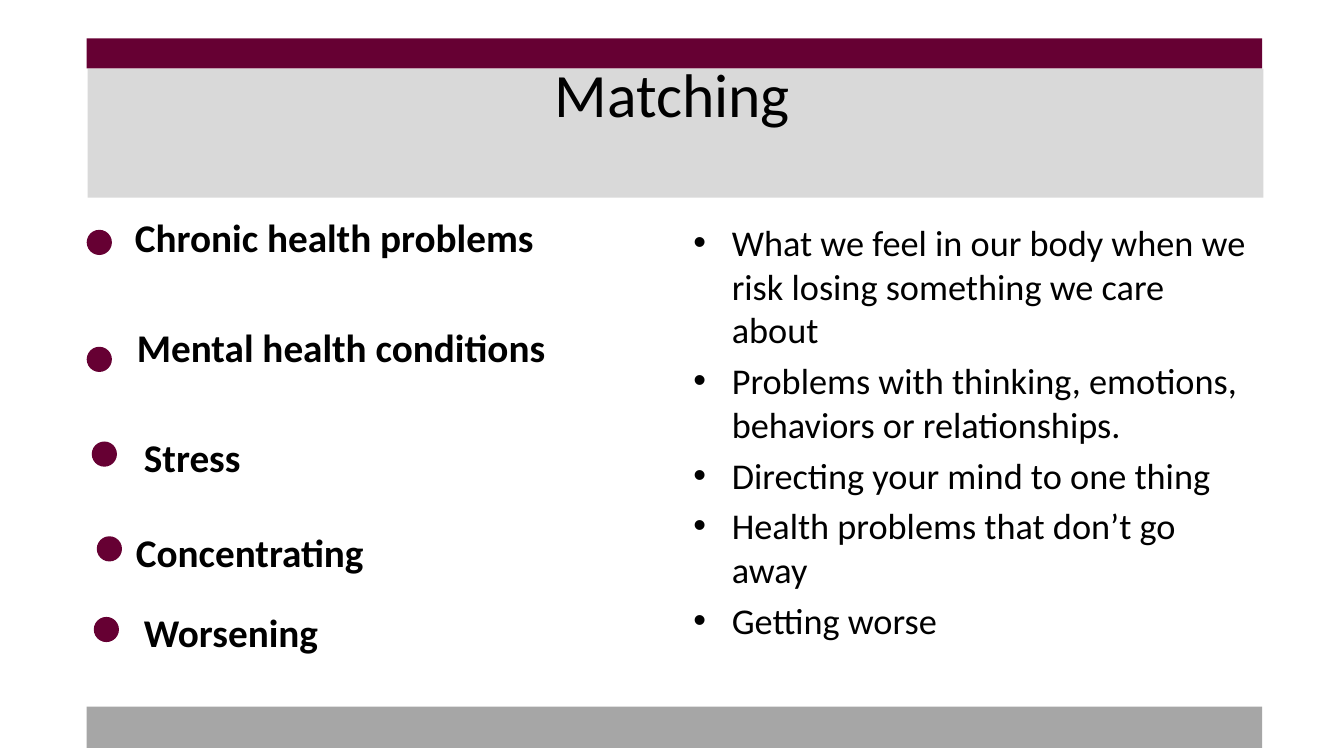
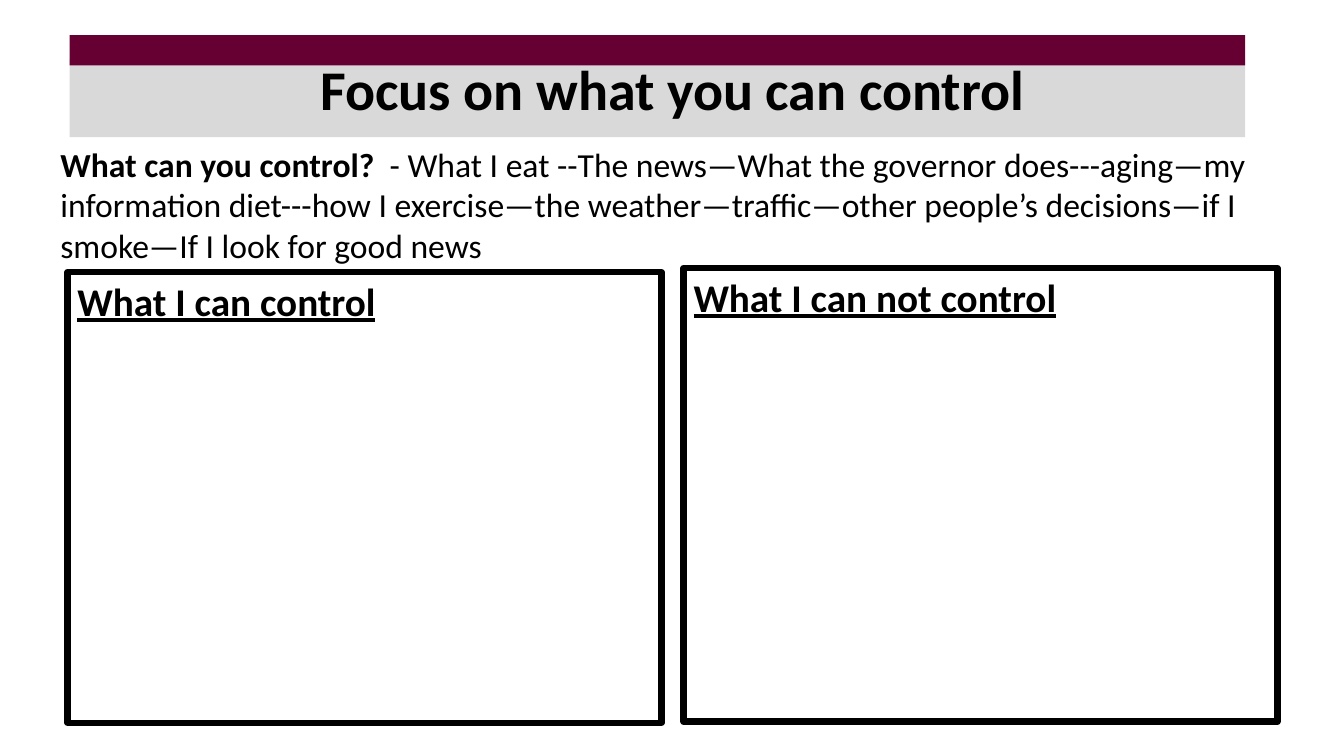
from typing import NamedTuple

from pptx import Presentation
from pptx.dml.color import RGBColor
from pptx.enum.shapes import MSO_SHAPE as Shp
from pptx.enum.text import MSO_ANCHOR as Anchor, PP_ALIGN as Align
from pptx.oxml.ns import qn
from pptx.util import Inches, Pt
from lxml import etree

COLORS = {"maroon": "660033", "light": "D9D9D9", "mid": "A6A6A6", "black": "000000"}
FONT = "Calibri"
BAND_W, STRIPE_H, DOT = 11.66, 0.3, 0.25


class Box(NamedTuple):
    x: float
    y: float
    w: float
    h: float


class Term(NamedTuple):
    text: str
    x: float
    y: float
    dot_x: float
    dot_y: float


class Panel(NamedTuple):
    heading: str
    box: Box


TERMS = [
    Term("Chronic health problems", 1.24, 2.07, 0.86, 2.28),
    Term("Mental health conditions", 1.26, 3.16, 0.86, 3.44),
    Term("Stress", 1.33, 4.25, 0.91, 4.38),
    Term("Concentrating", 1.25, 5.19, 0.96, 5.32),
    Term("Worsening", 1.33, 5.99, 0.93, 6.12),
]
DEFINITIONS = [
    "What we feel in our body when we risk losing something we care about",
    "Problems with thinking, emotions, behaviors or relationships.",
    "Directing your mind to one thing",
    "Health problems that don’t go away",
    "Getting worse",
]
QUESTION = "What can you control?  "
CHOICES = (
    "- What I eat --The news—What the governor does---aging—my information diet"
    "---how I exercise—the weather—traffic—other people’s decisions—if I smoke"
    "—If I look for good news"
)
PANELS = [
    Panel("What I can control", Box(0.67, 2.7, 5.89, 4.47)),
    Panel("What I can not control", Box(6.78, 2.66, 5.89, 4.5)),
]


def rgb(name: str) -> RGBColor:
    return RGBColor.from_string(COLORS[name])


def style(p, size: float, bold: bool = False) -> None:
    f = p.font
    f.name, f.size, f.bold = FONT, Pt(size), bold
    f.color.rgb = rgb("black")


def add_shape(s, kind: Shp, box: Box, fill: str = ""):
    sp = s.shapes.add_shape(kind, *map(Inches, box))
    sp.shadow.inherit = False
    if fill:
        sp.fill.solid()
        sp.fill.fore_color.rgb = rgb(fill)
    else:
        sp.fill.background()
    sp.line.fill.background()
    return sp


def add_text(s, box: Box, text: str, size: float, bold: bool = False):
    tf = s.shapes.add_textbox(*map(Inches, box)).text_frame
    tf.word_wrap = True
    p = tf.paragraphs[0]
    p.text = text
    style(p, size, bold)
    return tf


def add_header(s, title: str, band: Box, stripe_y: float, title_y: float,
               size: float, bold: bool) -> None:
    """Light band, maroon stripe and centred title."""
    add_shape(s, Shp.RECTANGLE, band, "light")
    stripe_x = 0.86 if band.x > 0.8 else band.x
    add_shape(s, Shp.RECTANGLE, Box(stripe_x, stripe_y, BAND_W, STRIPE_H), "maroon")
    tf = add_text(s, Box(0.67, title_y, 12, 1.25), title, size, bold)
    tf.vertical_anchor = Anchor.MIDDLE
    tf.paragraphs[0].alignment = Align.CENTER


def add_term(s, term: Term) -> None:
    add_shape(s, Shp.OVAL, Box(term.dot_x, term.dot_y, DOT, DOT), "maroon")
    add_text(s, Box(term.x, term.y, 5.3, 0.57), term.text, 28, True)


def add_bullets(s, box: Box, items: list[str], size: float) -> None:
    tf = add_text(s, box, items[0], size)
    for item in items[1:]:
        p = tf.add_paragraph()
        p.text = item
        p.space_before = Pt(size * 0.2)
        style(p, size)
    for p in tf.paragraphs:
        pPr = p._p.get_or_add_pPr()
        pPr.set("marL", str(Inches(0.38)))
        pPr.set("indent", str(-Inches(0.38)))
        font = etree.Element(qn("a:buFont"), typeface="Arial")
        char = etree.Element(qn("a:buChar"), char="•")
        # Bullets come before the default run properties
        at = list(pPr).index(pPr.find(qn("a:defRPr")))
        pPr.insert(at, font)
        pPr.insert(at + 1, char)


def add_panel(s, panel: Panel) -> None:
    sp = add_shape(s, Shp.RECTANGLE, panel.box)
    sp.line.color.rgb = rgb("black")
    sp.line.width = Pt(4.5)
    tf = sp.text_frame
    tf.word_wrap, tf.vertical_anchor = True, Anchor.TOP
    p = tf.paragraphs[0]
    p.text, p.alignment = panel.heading, Align.LEFT
    style(p, 28, True)
    p.font.underline = True


def build_matching(s) -> None:
    add_header(s, "Matching", Box(0.87, 0.68, BAND_W, 1.28), 0.38, 0.3, 44, False)
    add_shape(s, Shp.RECTANGLE, Box(0.86, 7.01, BAND_W, 0.41), "mid")
    for term in TERMS:
        add_term(s, term)
    add_bullets(s, Box(6.78, 2.14, 5.74, 4.56), DEFINITIONS, 25.9)


def build_control(s) -> None:
    add_header(s, "Focus on what you can control", Box(0.69, 0.59, BAND_W, 0.77),
               0.35, 0.25, 40, True)
    for panel in PANELS:
        add_panel(s, panel)
    tf = add_text(s, Box(0.5, 1.38, 12.08, 1.31), QUESTION, 24)
    p = tf.paragraphs[0]
    p.runs[0].font.bold = True
    p.add_run().text = CHOICES


def main() -> None:
    prs = Presentation()
    prs.slide_width, prs.slide_height = Inches(13.33), Inches(7.5)
    for build in (build_matching, build_control):
        build(prs.slides.add_slide(prs.slide_layouts[6]))
    prs.save("out.pptx")


if __name__ == "__main__":
    main()
